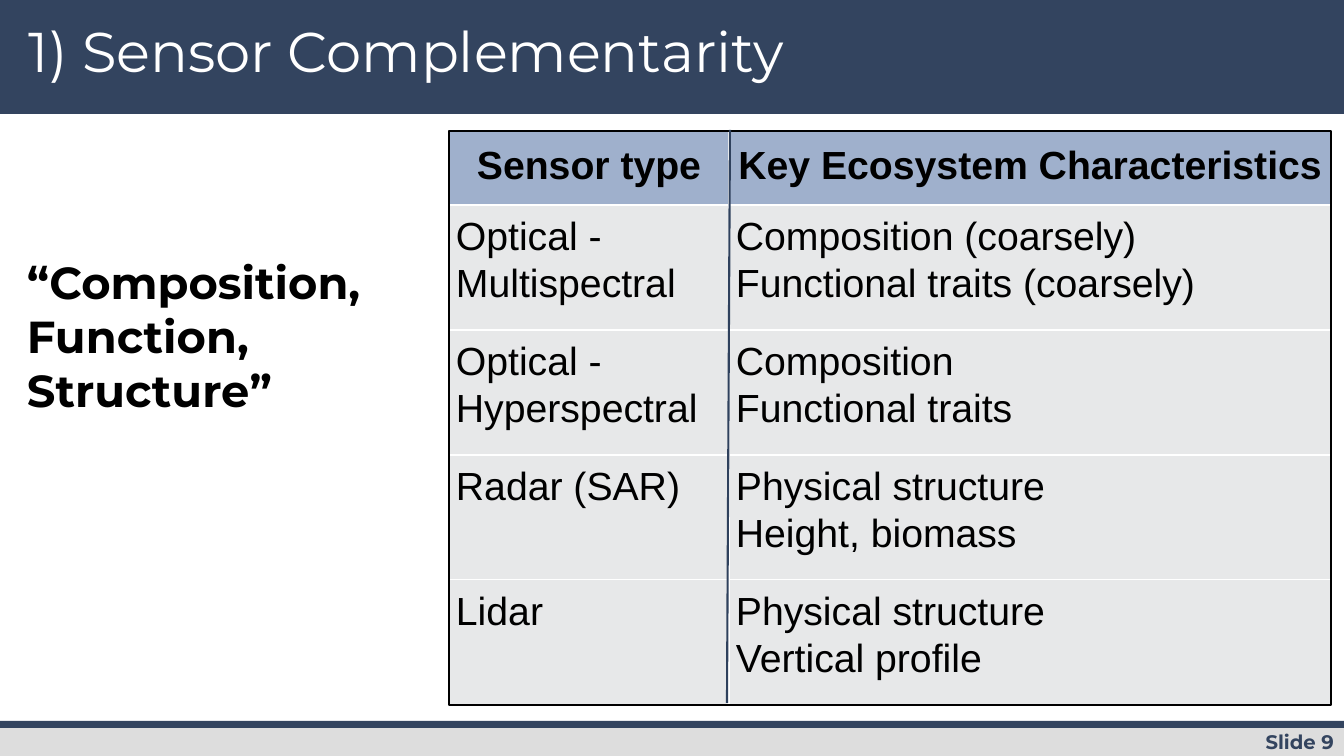
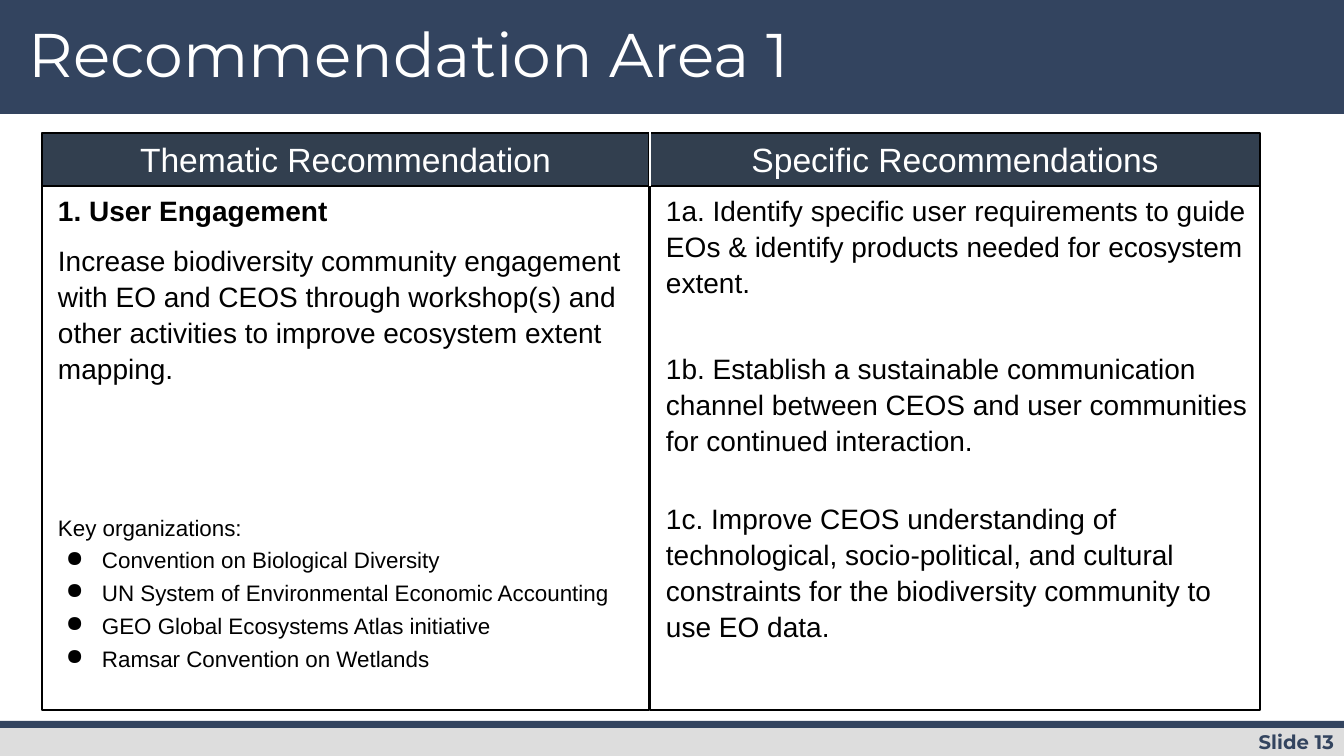
import pptx
import pptx.util
import pptx.dml.color
import pptx.enum.shapes
import pptx.enum.text
import pptx.oxml
import pptx.oxml.ns
from dataclasses import dataclass


# Theme
@dataclass(frozen=True)
class Theme:
    navy: str = "33445F"
    rule: str = "2F415D"
    slate: str = "323F4F"
    grey: str = "DDDDDD"
    head: str = "9FB0CC"
    cell: str = "E7E8E9"
    white: str = "FFFFFF"
    black: str = "000000"
    display: str = "Montserrat"
    text: str = "Arial"
    footer: int = 14
    small: int = 16
    body: int = 20
    label: int = 24
    table: int = 28
    quote: int = 32


T = Theme()
EMU_PER_PX = 914400 / 100.8
W, H = 1344, 756
PAD_X, PAD_Y, CELL_PAD = 10, 5, 7

# Content
QUOTE = "“Composition, Function, Structure”"
SENSOR_ROWS = [
    (["Sensor type"], ["Key Ecosystem Characteristics"]),
    (["Optical - Multispectral"],
     ["Composition (coarsely)", "Functional traits (coarsely)"]),
    (["Optical -", "Hyperspectral"], ["Composition", "Functional traits"]),
    (["Radar (SAR)"], ["Physical structure", "Height, biomass"]),
    (["Lidar"], ["Physical structure", "Vertical profile"]),
]
ORGANIZATIONS = [
    "Convention on Biological Diversity",
    "UN System of Environmental Economic Accounting",
    "GEO Global Ecosystems Atlas initiative",
    "Ramsar Convention on Wetlands",
]
KEY = dict(size=T.small, spacing=1.22)
THEMATIC = [
    ("1. User Engagement", dict(bold=True)),
    ("Increase biodiversity community engagement with EO and CEOS through "
     "workshop(s) and other activities to improve ecosystem extent mapping.",
     dict(before=10)),
    ("Key organizations:", dict(KEY, before=88)),
    *[(name, dict(KEY, bullet="●", left=50, indent=-36))
      for name in ORGANIZATIONS],
]
SPECIFIC = [
    "1a. Identify specific user requirements to guide EOs & identify "
    "products needed for ecosystem extent.",
    ("1b. Establish a sustainable communication channel between CEOS and "
     "user communities for continued interaction.", dict(before=36)),
    ("1c. Improve CEOS understanding of technological, socio-political, and "
     "cultural constraints for the biodiversity community to use EO data.",
     dict(before=30)),
]
# heading, paragraphs, left, width
PANELS = [
    ("Thematic Recommendation", THEMATIC, 42, 607),
    ("Specific Recommendations", SPECIFIC, 650, 610),
]

RECT = pptx.enum.shapes.MSO_SHAPE.RECTANGLE
ALIGN = pptx.enum.text.PP_ALIGN
ANCHOR = pptx.enum.text.MSO_ANCHOR


# Helpers
def px(n):
    return pptx.util.Emu(round(n * EMU_PER_PX))


def rgb(value):
    return pptx.dml.color.RGBColor.from_string(value)


def element(xml):
    return pptx.oxml.parse_xml(
        xml.replace(">", " " + pptx.oxml.ns.nsdecls("a") + ">", 1))


def add_paragraph_text(p, text, size=T.body, font=T.text, color=T.black,
                       bold=False, align=ALIGN.LEFT, spacing=1.0, before=0,
                       left=0, indent=0, bullet=None):
    pPr = p._p.get_or_add_pPr()
    pPr.set("marL", str(px(left)))
    pPr.set("indent", str(px(indent)))
    if bullet:
        pPr.append(element(
            f'<a:buClr><a:srgbClr val="{color}"/></a:buClr>'))
        pPr.append(element(f"<a:buChar><a:dummy/></a:buChar>"))
        pPr[-1].remove(pPr[-1][0])
        pPr[-1].set("char", bullet)
    p.alignment = align
    p.line_spacing = spacing
    p.space_before = pptx.util.Pt(before)
    r = p.add_run()
    r.text = text
    r.font.size = pptx.util.Pt(size)
    r.font.name = font
    r.font.bold = bold
    r.font.color.rgb = rgb(color)


def write(tf, items, **fmt):
    """Fill a text frame with strings or (string, format) pairs."""
    tf.word_wrap = True
    for i, item in enumerate([items] if isinstance(items, str) else items):
        text, own = (item, {}) if isinstance(item, str) else item
        p = tf.add_paragraph() if i else tf.paragraphs[0]
        add_paragraph_text(p, text, **{**fmt, **own})


def set_margins(holder, x, y):
    holder.margin_left = holder.margin_right = px(x)
    holder.margin_top = holder.margin_bottom = px(y)


def add_text(s, box, items, **fmt):
    tf = s.shapes.add_textbox(*map(px, box)).text_frame
    set_margins(tf, PAD_X, PAD_Y)
    write(tf, items, **fmt)


def add_rect(s, box, fill=None, line=None, width=1.5, items=(),
             anchor=ANCHOR.TOP, **fmt):
    sp = s.shapes.add_shape(RECT, *map(px, box))
    sp.shadow.inherit = False
    if fill:
        sp.fill.solid()
        sp.fill.fore_color.rgb = rgb(fill)
    else:
        sp.fill.background()
    if line:
        sp.line.color.rgb = rgb(line)
        sp.line.width = pptx.util.Pt(width)
    else:
        sp.line.fill.background()
    if items:
        set_margins(sp.text_frame, PAD_X, PAD_Y)
        sp.text_frame.vertical_anchor = anchor
        write(sp.text_frame, items, **fmt)


def add_line(s, start, end, color, width):
    line = s.shapes.add_connector(
        pptx.enum.shapes.MSO_CONNECTOR.STRAIGHT, *map(px, start + end))
    line.line.color.rgb = rgb(color)
    line.line.width = pptx.util.Pt(width)
    line._element.spPr.append(element("<a:effectLst></a:effectLst>"))


def style_cell(cell, fill):
    set_margins(cell, CELL_PAD, CELL_PAD)
    tcPr = cell._tc.get_or_add_tcPr()
    for side in "LRTB":
        border = element(
            f"<a:ln{side}><a:solidFill><a:srgbClr val=\"{T.white}\"/>"
            f"</a:solidFill></a:ln{side}>")
        border.set("w", str(pptx.util.Pt(1)))
        tcPr.append(border)
    cell.fill.solid()
    cell.fill.fore_color.rgb = rgb(fill)


def add_base_slide(prs, title, size, number):
    """Title band, footer band with its rule, and slide number."""
    s = prs.slides.add_slide(prs.slide_layouts[6])
    for box, fill in [((0, 0, W, 114), T.navy),
                      ((0, 725, W, H - 725), T.grey),
                      ((0, 721, W, 7), T.navy)]:
        add_rect(s, box, fill)
    add_text(s, (1132, 725, 212, 34), f"Slide {number}", size=T.footer,
             font=T.display, color=T.navy, bold=True, align=ALIGN.RIGHT)
    add_text(s, (19, 19, 1035, 86), title, size=size, font=T.display,
             color=T.white, spacing=0.9)
    return s


# Slides
def add_sensor_slide(prs):
    s = add_base_slide(prs, "1) Sensor Complementarity", 40, 9)
    add_text(s, (11, 250, 420, 411), QUOTE, size=T.quote, font=T.display,
             bold=True, left=6)

    left, top, cols, head_h, row_h = 449, 131, (280, 602), 74, 125
    heights = [head_h] + [row_h] * (len(SENSOR_ROWS) - 1)
    box = (left, top, sum(cols), sum(heights))
    table = s.shapes.add_table(len(heights), len(cols), *map(px, box)).table
    table.first_row = table.horz_banding = False
    for column, width in zip(table.columns, cols):
        column.width = px(width)
    for i, (row, height) in enumerate(zip(SENSOR_ROWS, heights)):
        table.rows[i].height = px(height)
        fmt = (dict(bold=True, align=ALIGN.CENTER, spacing=1.15) if i == 0
               else dict(spacing=1.07))
        for j, lines in enumerate(row):
            cell = table.cell(i, j)
            style_cell(cell, T.cell if i else T.head)
            write(cell.text_frame, lines, size=T.table, **fmt)

    add_rect(s, box, line=T.black)
    add_line(s, (730, 130), (727, 703), T.rule, 1.5)


def add_recommendation_slide(prs):
    s = add_base_slide(prs, "Recommendation Area 1", 44, 13)
    top, head_h, body_h = 133, 53, 524
    for heading, items, left, width in PANELS:
        add_rect(s, (left, top + head_h, width, body_h), line=T.black,
                 items=items, left=6, spacing=1.07)
        add_rect(s, (left, top, width, head_h), T.slate, T.black, 1,
                 items=heading, anchor=ANCHOR.MIDDLE, size=T.label,
                 color=T.white, align=ALIGN.CENTER)
    divider = PANELS[1][2]
    add_line(s, (divider, top - 2), (divider, top + head_h), T.white, 1)


def main():
    prs = pptx.Presentation()
    prs.slide_width, prs.slide_height = px(W), px(H)
    add_sensor_slide(prs)
    add_recommendation_slide(prs)
    prs.save("out.pptx")


if __name__ == "__main__":
    main()
